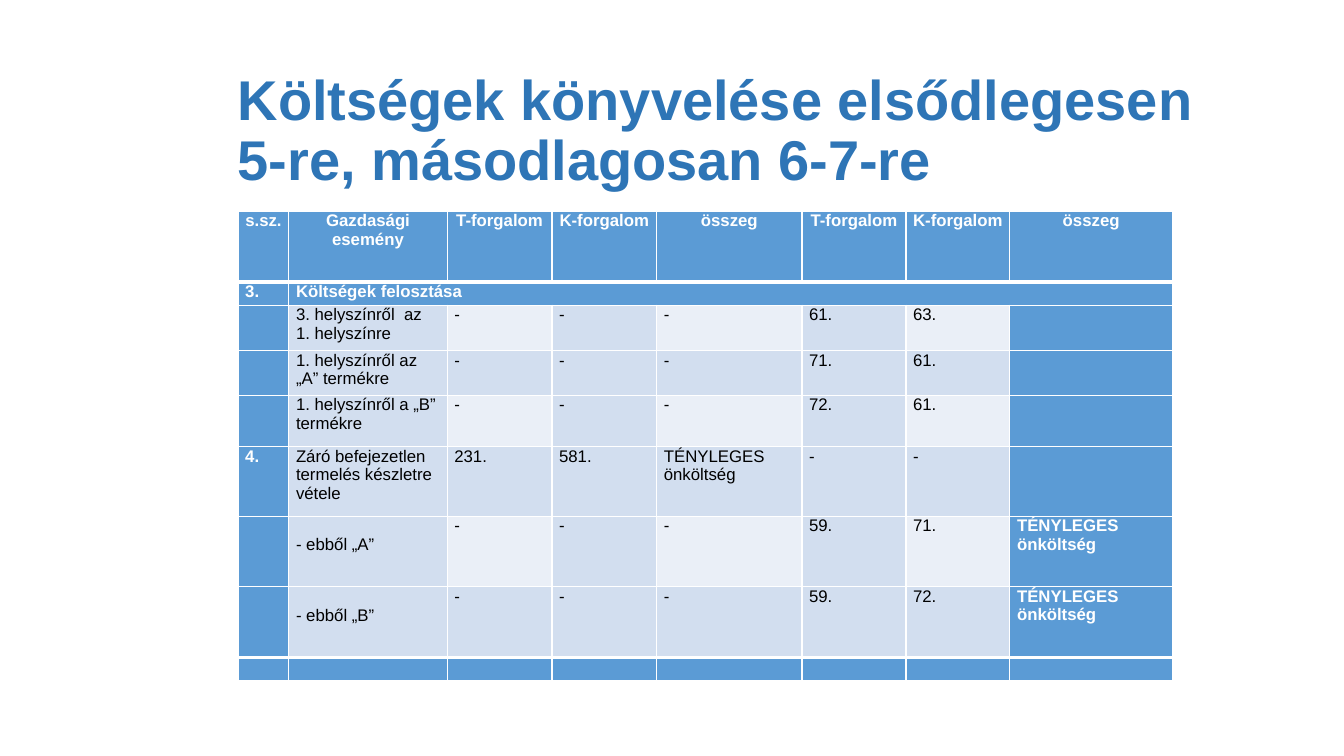
from lxml.etree import SubElement
from pptx import Presentation
from pptx.dml.color import RGBColor
from pptx.enum.text import MSO_ANCHOR, PP_ALIGN
from pptx.oxml.ns import qn
from pptx.util import Cm, Pt

FONT = "Arial"
BLUE, MID, LIGHT = "5B9BD5", "D2DEEF", "EAEFF7"
WHITE, BLACK, TITLE_BLUE = "FFFFFF", "000000", "2E75B6"
BODY_SIZE = 12
LINE_HEIGHT = Cm(0.49)

COLUMN_WIDTHS = [1.28, 3.99, 2.64, 2.64, 3.66, 2.62, 2.62, 4.1]
ROW_HEIGHTS = [1.78, 0.58, 1.15, 1.12, 1.3, 1.75, 1.78, 1.78, 0.58]
ACTUAL_COST = "TÉNYLEGES önköltség"
ENTRIES = [
    ["s.sz.", "Gazdasági esemény", "T-forgalom", "K-forgalom", "összeg",
     "T-forgalom", "K-forgalom", "összeg"],
    ["3.", "Költségek felosztása", "", "", "", "", "", ""],
    ["", "3. helyszínről  az 1. helyszínre", "-", "-", "-", "61.", "63.", ""],
    ["", "1. helyszínről az „A” termékre", "-", "-", "-", "71.", "61.", ""],
    ["", "1. helyszínről a „B” termékre", "-", "-", "-", "72.", "61.", ""],
    ["4.", "Záró befejezetlen termelés készletre vétele", "231.", "581.",
     ACTUAL_COST, "-", "-", ""],
    ["", "- ebből „A”", "-", "-", "-", "59.", "71.", ACTUAL_COST],
    ["", "- ebből „B”", "-", "-", "-", "59.", "72.", ACTUAL_COST],
    [""] * 8,
]
HEADER, SECTION, TOTAL = 0, 1, len(ENTRIES) - 1
LAST_COLUMN = len(COLUMN_WIDTHS) - 1


def rgb(color):
    return RGBColor.from_string(color)


def add_run(paragraph, text, size, color, bold):
    run = paragraph.add_run()
    run.text = text
    run.font.name = FONT
    run.font.size = Pt(size)
    run.font.bold = bold
    run.font.color.rgb = rgb(color)


def add_title(slide, text):
    frame = slide.shapes.add_textbox(Cm(5.74), Cm(2.24), Cm(25.98), Cm(2.2)).text_frame
    frame.word_wrap = True
    frame.vertical_anchor = MSO_ANCHOR.MIDDLE
    paragraph = frame.paragraphs[0]
    paragraph.line_spacing = 0.9
    add_run(paragraph, text, 40, TITLE_BLUE, True)


def set_borders(cell, row):
    """White hairlines, thicker under the header and above the total row."""
    thick_sides = {HEADER: "B", TOTAL - 1: "B", SECTION: "T", TOTAL: "T"}
    properties = cell._tc.get_or_add_tcPr()
    for side in "LRTB":
        width = Pt(3 if thick_sides.get(row) == side else 1)
        line = SubElement(properties, qn(f"a:ln{side}"), w=str(width))
        SubElement(SubElement(line, qn("a:solidFill")), qn("a:srgbClr"), val=WHITE)


def cell_fill(row, column):
    if row in (HEADER, SECTION, TOTAL) or column in (0, LAST_COLUMN):
        return BLUE
    return LIGHT if row % 2 == 0 and column % 2 == 0 else MID


def fill_cell(cell, row, column, text):
    color = cell_fill(row, column)
    set_borders(cell, row)
    cell.fill.solid()
    cell.fill.fore_color.rgb = rgb(color)
    cell.margin_left = cell.margin_right = Cm(0.18)
    cell.margin_top = LINE_HEIGHT if text.startswith("- ") else 0
    cell.margin_bottom = 0
    paragraph = cell.text_frame.paragraphs[0]
    if row == HEADER:
        paragraph.alignment = PP_ALIGN.CENTER
    if text:
        strong = color == BLUE
        add_run(paragraph, text, BODY_SIZE, WHITE if strong else BLACK, strong)
    else:
        SubElement(paragraph._p, qn("a:endParaRPr"), sz=str(BODY_SIZE * 100))


def add_ledger(slide):
    table = slide.shapes.add_table(
        len(ROW_HEIGHTS), len(COLUMN_WIDTHS), Cm(6), Cm(5.33),
        Cm(sum(COLUMN_WIDTHS)), Cm(sum(ROW_HEIGHTS))).table
    table.horz_banding = False
    for column, width in zip(table.columns, COLUMN_WIDTHS):
        column.width = Cm(width)
    for row, height in zip(table.rows, ROW_HEIGHTS):
        row.height = Cm(height)
    table.cell(SECTION, 1).merge(table.cell(SECTION, LAST_COLUMN))
    for row, entry in enumerate(ENTRIES):
        for column, text in enumerate(entry):
            fill_cell(table.cell(row, column), row, column, text)


def main():
    presentation = Presentation()
    presentation.slide_width = Cm(33.87)
    presentation.slide_height = Cm(19.05)
    slide = presentation.slides.add_slide(presentation.slide_layouts[6])
    add_title(slide, "Költségek könyvelése elsődlegesen 5-re, másodlagosan 6-7-re")
    add_ledger(slide)
    presentation.save("out.pptx")


if __name__ == "__main__":
    main()
